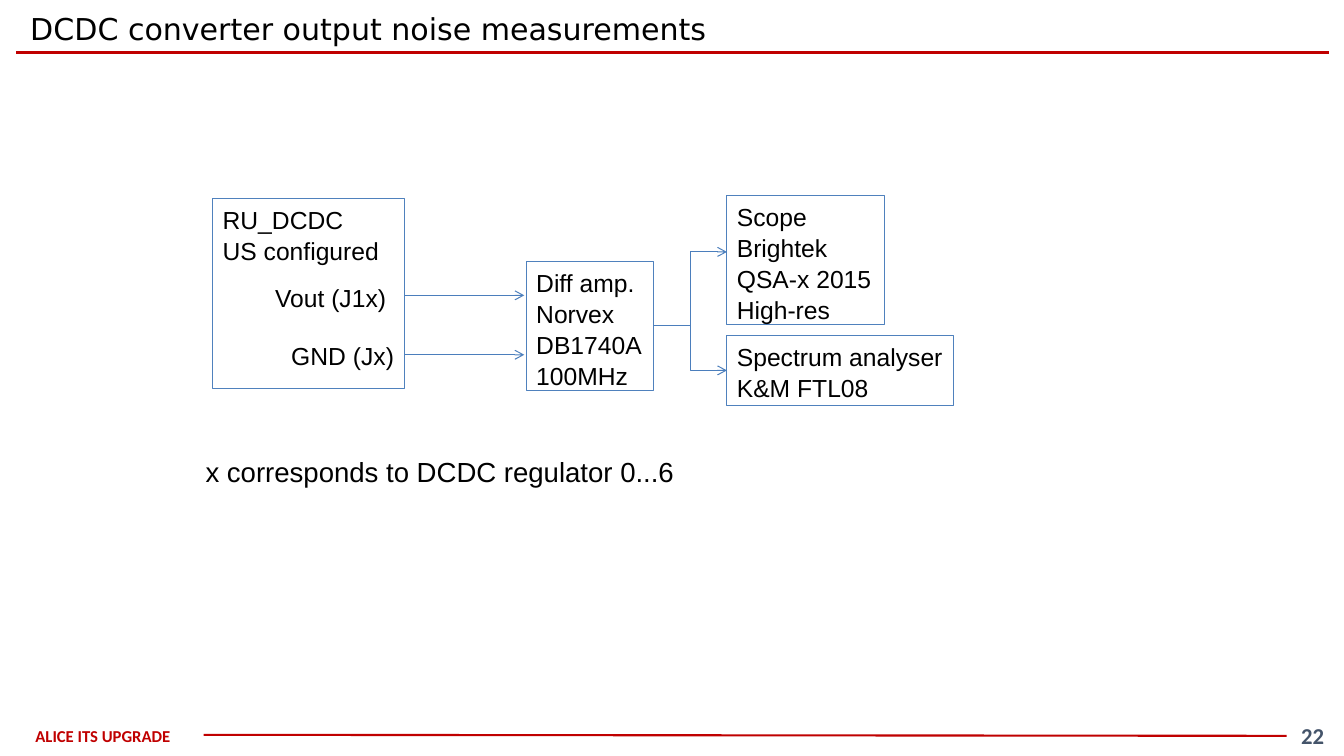
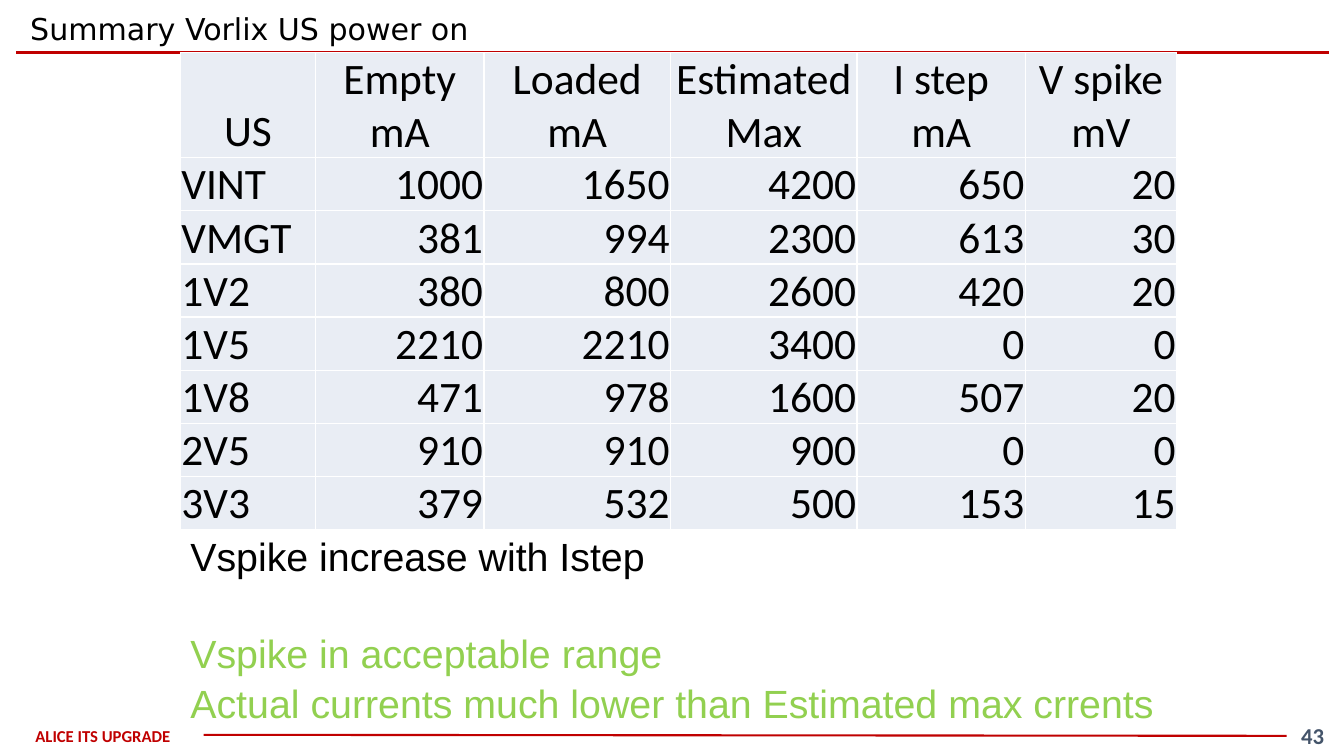
import pptx
import pptx.dml.color
import pptx.enum.shapes
import pptx.enum.text
import pptx.oxml
import pptx.oxml.ns
import pptx.util
from pptx.util import Inches

RGBColor = pptx.dml.color.RGBColor
RED = RGBColor(0xC0, 0x00, 0x00)
SLATE = RGBColor(0x44, 0x54, 0x6A)
BLACK = RGBColor(0x00, 0x00, 0x00)
BOX_BLUE = RGBColor(0x4F, 0x81, 0xBD)
ARROW_BLUE = RGBColor(0x4B, 0x7E, 0xBC)
CELL_FILL = RGBColor(0xE9, 0xED, 0xF4)
GREEN = RGBColor(0x92, 0xD0, 0x50)

ANCHOR = pptx.enum.text.MSO_ANCHOR
ALIGN = pptx.enum.text.PP_ALIGN
CONNECTOR = pptx.enum.shapes.MSO_CONNECTOR
BODY_SPACING = 1.05
DIAGRAM_SIZE = 17.6

SUPPLY_COLUMNS = [1.34, 1.67, 1.85, 1.85, 1.67, 1.5]
SUPPLY_ROWS = [
    ["US", "Empty\nmA", "Loaded\nmA", "Estimated Max", "I step\nmA", "V spike\nmV"],
    ["VINT", 1000, 1650, 4200, 650, 20],
    ["VMGT", 381, 994, 2300, 613, 30],
    ["1V2", 380, 800, 2600, 420, 20],
    ["1V5", 2210, 2210, 3400, 0, 0],
    ["1V8", 471, 978, 1600, 507, 20],
    ["2V5", 910, 910, 900, 0, 0],
    ["3V3", 379, 532, 500, 153, 15],
]


def style_para(para, size, font="Arial", color=BLACK, bold=False, align=ALIGN.LEFT):
    para.alignment = align
    para.font.size = pptx.util.Pt(size)
    para.font.name = font
    para.font.color.rgb = color
    para.font.bold = bold


def fill_text(shape, lines, size, anchor=ANCHOR.TOP, insets=(0.1, 0.05, 0, 0.05),
              spacing=BODY_SPACING, **style):
    """Write one paragraph a line; insets are left, top, right, bottom in inches."""
    frame = shape.text_frame
    frame.word_wrap = True
    frame.vertical_anchor = anchor
    (frame.margin_left, frame.margin_top,
     frame.margin_right, frame.margin_bottom) = map(Inches, insets)
    frame.text = "\n".join(lines)
    for para in frame.paragraphs:
        style_para(para, size, **style)
        para.line_spacing = spacing
    return frame


def add_text(page, box, lines, size, **options):
    shape = page.shapes.add_textbox(*map(Inches, box))
    return fill_text(shape, lines, size, **options)


def add_line(page, start, end, color, width, kind=CONNECTOR.STRAIGHT, arrow=False):
    line = page.shapes.add_connector(kind, *map(Inches, start + end))
    line.line.color.rgb = color
    line.line.width = pptx.util.Pt(width)
    properties = line._element.spPr
    if arrow:
        tail = pptx.oxml.parse_xml(
            f'<a:tailEnd {pptx.oxml.ns.nsdecls("a")} type="arrow"/>')
        line.line._get_or_add_ln().append(tail)
    properties.append(pptx.oxml.parse_xml(
        f'<a:effectLst {pptx.oxml.ns.nsdecls("a")}/>'))
    return line


def add_page(deck, title, number):
    """Add a blank page with the shared title, rules and footer."""
    page = deck.slides.add_slide(deck.slide_layouts[6])
    add_line(page, (0.16, 0.52), (13.18, 0.52), RED, 2.25)
    add_text(page, (0.02, 7.22, 2, 0.16), ["ALICE ITS UPGRADE"], 11.9,
             anchor=ANCHOR.MIDDLE, insets=(0, 0, 0, 0), spacing=1,
             font="Calibri", color=RED, bold=True, align=ALIGN.CENTER)
    add_line(page, (2.02, 7.29), (12.76, 7.3), RED, 1.5)
    add_text(page, (12.76, 7.14, 0.52, 0.31), [str(number)], 16.2,
             anchor=ANCHOR.MIDDLE, insets=(0.04,) * 4, spacing=1,
             font="Calibri", color=SLATE, bold=True, align=ALIGN.CENTER)
    add_text(page, (0.16, 0.05, 13.02, 0.47), [title], 21.5,
             anchor=ANCHOR.MIDDLE, insets=(0.14, 0.07, 0.14, 0.07), spacing=1,
             font="DejaVu Sans")
    return page


def add_device(page, box, lines):
    device = page.shapes.add_shape(
        pptx.enum.shapes.MSO_SHAPE.RECTANGLE, *map(Inches, box))
    device.shadow.inherit = False
    device.fill.background()
    device.line.color.rgb = BOX_BLUE
    device.line.width = pptx.util.Pt(0.75)
    fill_text(device, lines, DIAGRAM_SIZE)
    return device


def add_setup_diagram(page, left, top):
    """Draw the measurement chain from the board to both instruments."""
    def arrow(start, end, kind=CONNECTOR.STRAIGHT):
        return add_line(page, start, end, ARROW_BLUE, 0.75, kind, arrow=True)

    add_device(page, (left, top + 0.03, 1.9, 1.88), ["RU_DCDC", "US configured"])
    amplifier = add_device(page, (left + 3.11, top + 0.65, 1.26, 1.28),
                           ["Diff amp.", "Norvex", "DB1740A", "100MHz"])
    add_device(page, (left + 5.1, top, 1.56, 1.28),
               ["Scope", "Brightek", "QSA-x 2015", "High-res"])
    analyser = add_device(page, (left + 5.1, top + 1.39, 2.25, 0.69),
                          ["Spectrum analyser", "K&M FTL08"])

    signals = [("Vout (J1x)", 0.52, 0.8, 0.99), ("GND (Jx)", 0.68, 1.38, 1.58)]
    for name, label_left, label_top, wire in signals:
        add_text(page, (left + label_left, top + label_top, 1.31, 0.4),
                 [name], DIAGRAM_SIZE)
        arrow((left + 1.91, top + wire), (left + 3.09, top + wire))

    output = (left + 4.37, top + 1.29)
    to_scope = arrow(output, (left + 5.1, top + 0.56), CONNECTOR.ELBOW)
    to_analyser = arrow(output, (left + 5.1, top + 1.73), CONNECTOR.ELBOW)
    for branch in (to_scope, to_analyser):
        branch.begin_connect(amplifier, 3)
    to_analyser.end_connect(analyser, 1)


def add_cell_borders(cell):
    properties = cell._tc.get_or_add_tcPr()
    for position, side in enumerate(("lnL", "lnR", "lnT", "lnB")):
        properties.insert(position, pptx.oxml.parse_xml(
            f'<a:{side} {pptx.oxml.ns.nsdecls("a")} w="12700"><a:solidFill>'
            f'<a:srgbClr val="FFFFFF"/></a:solidFill></a:{side}>'))


def add_supply_table(page, left, top):
    row_height = 0.52
    heights = [2 * row_height] + [row_height] * (len(SUPPLY_ROWS) - 1)
    table = page.shapes.add_table(
        len(heights), len(SUPPLY_COLUMNS), Inches(left), Inches(top),
        Inches(sum(SUPPLY_COLUMNS)), Inches(sum(heights))).table
    table.first_row = table.horz_banding = False
    for column, width in zip(table.columns, SUPPLY_COLUMNS):
        column.width = Inches(width)
    for row_index, (row, height, values) in enumerate(
            zip(table.rows, heights, SUPPLY_ROWS)):
        row.height = Inches(height)
        for column_index, (cell, value) in enumerate(zip(row.cells, values)):
            if row_index == 0:
                align = ALIGN.CENTER
            else:
                align = ALIGN.RIGHT if column_index else ALIGN.LEFT
            cell.text = str(value)
            cell.vertical_anchor = ANCHOR.BOTTOM
            cell.margin_left = cell.margin_right = cell.margin_top = Inches(0.01)
            cell.margin_bottom = 0
            cell.fill.solid()
            cell.fill.fore_color.rgb = CELL_FILL
            add_cell_borders(cell)
            for para in cell.text_frame.paragraphs:
                style_para(para, 31, font="Calibri", align=align)


def add_conclusions(page, box):
    frame = add_text(page, box, [
        "Vspike increase with Istep",
        "Vspike in acceptable range",
        "Actual currents much lower than Estimated max crrents",
    ], 28.1)
    findings = frame.paragraphs[1:]
    findings[0].space_before = pptx.util.Pt(34)
    for para in findings:
        para.font.color.rgb = GREEN


def build_noise_page(deck):
    page = add_page(deck, "DCDC converter output noise measurements", 22)
    add_setup_diagram(page, 2.11, 1.94)
    add_text(page, (1.94, 4.45, 9.42, 0.43),
             ["x corresponds to DCDC regulator 0...6"], 19.7)


def build_summary_page(deck):
    page = add_page(deck, "Summary Vorlix US power on", 43)
    add_supply_table(page, 1.79, 0.52)
    add_conclusions(page, (1.79, 5.21, 10, 1.99))


def main():
    deck = pptx.Presentation()
    deck.slide_width = Inches(13.33)
    deck.slide_height = Inches(7.5)
    build_noise_page(deck)
    build_summary_page(deck)
    deck.save("out.pptx")


if __name__ == "__main__":
    main()
